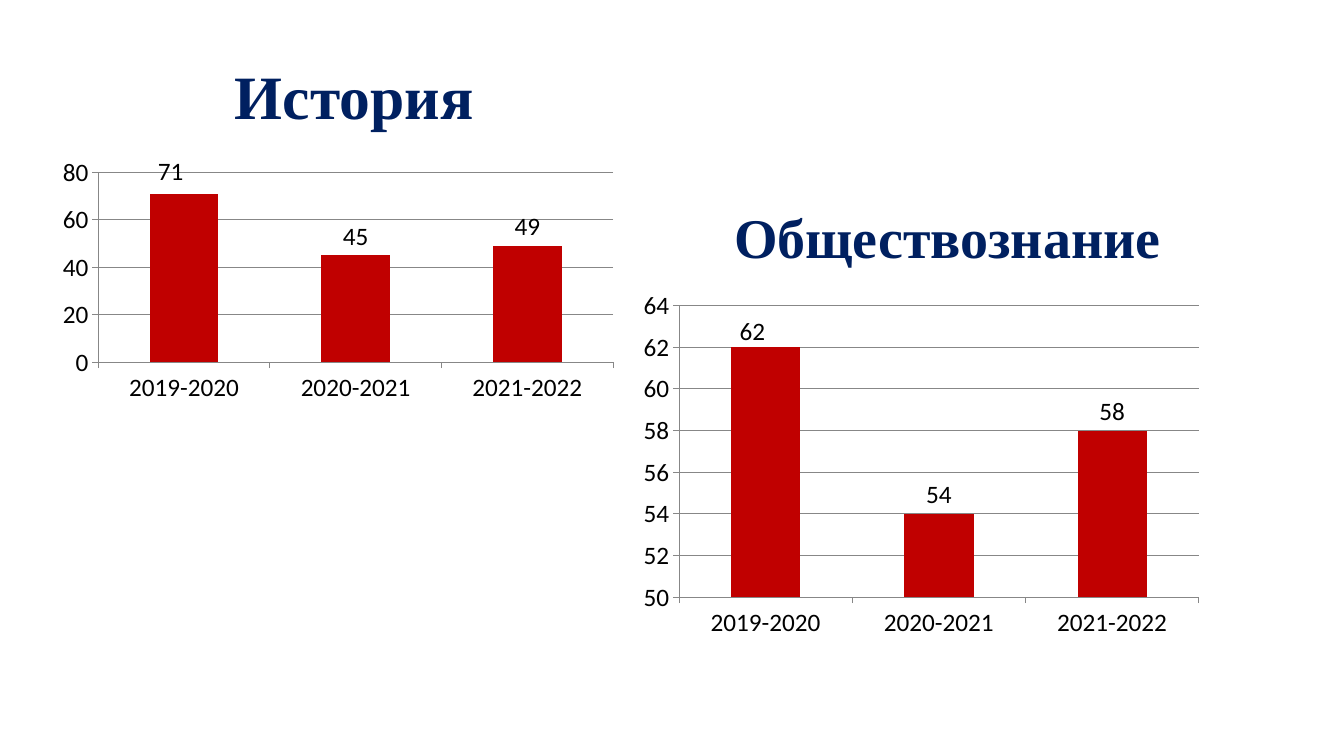
from lxml import etree
from pptx import Presentation
from pptx.chart.data import CategoryChartData
from pptx.dml.color import RGBColor
from pptx.enum.chart import XL_CHART_TYPE, XL_LABEL_POSITION as LABEL_POS, XL_TICK_MARK as TICK
from pptx.enum.text import MSO_ANCHOR as ANCHOR, PP_ALIGN
from pptx.oxml.ns import qn
from pptx.util import Pt

PX = 9144  # 100 px to the inch
NAVY = RGBColor(0x00, 0x20, 0x60)
RED = RGBColor(0xC0, 0x00, 0x00)
GREY = RGBColor(0x87, 0x87, 0x87)
BLACK = RGBColor(0, 0, 0)
YEARS = ["2019-2020", "2020-2021", "2021-2022"]


def emu(box):
    return [n * PX for n in box]


def add_heading(s, box, text, size, anchor, line_spacing):
    tf = s.shapes.add_textbox(*emu(box)).text_frame
    tf.word_wrap = True
    tf.vertical_anchor = anchor
    p = tf.paragraphs[0]
    p.text = text
    p.alignment = PP_ALIGN.CENTER
    p.line_spacing = line_spacing
    p.font.name = "Times New Roman"
    p.font.size = Pt(size)
    p.font.bold = True
    p.font.color.rgb = NAVY


def set_font(font):
    font.name = "Calibri"
    font.size = Pt(18)
    font.color.rgb = BLACK


def manual_layout(**settings):
    layout = etree.Element(qn("c:layout"))
    manual = etree.SubElement(layout, qn("c:manualLayout"))
    for tag, value in settings.items():
        etree.SubElement(manual, qn(f"c:{tag}")).set("val", str(value))
    return layout


def set_plot_area(chart, x, y, w, h):
    area = chart._chartSpace.find(f".//{qn('c:plotArea')}")
    for old in area.findall(qn("c:layout")):
        area.remove(old)
    area.insert(0, manual_layout(layoutTarget="inner", xMode="edge", yMode="edge",
                                 x=x, y=y, w=w, h=h))


def label_bars(chart, first_shift):
    """Show values above the bars and shift the first label by a share of the chart."""
    series = chart.plots[0].series[0]
    labels = series.data_labels
    labels.show_value = True
    first = series.points[0].data_label
    for label in (labels, first):
        label.position = LABEL_POS.OUTSIDE_END
        set_font(label.font)
    dx, dy = first_shift
    idx = chart._chartSpace.find(f".//{qn('c:dLbl')}/{qn('c:idx')}")
    idx.addnext(manual_layout(x=dx, y=dy))


def add_results_chart(s, box, values, scale, plot, first_shift):
    data = CategoryChartData()
    data.categories = YEARS
    data.add_series("Series 1", values)
    chart = s.shapes.add_chart(XL_CHART_TYPE.COLUMN_CLUSTERED, *emu(box), data).chart
    chart.has_legend = False
    chart.has_title = False
    set_font(chart.font)
    bars = chart.plots[0]
    bars.gap_width = 150
    bars.vary_by_categories = False
    fill = bars.series[0].format.fill
    fill.solid()
    fill.fore_color.rgb = RED

    value_axis = chart.value_axis
    value_axis.minimum_scale, value_axis.maximum_scale, value_axis.major_unit = scale
    value_axis.has_major_gridlines = True
    for axis in (chart.category_axis, value_axis):
        axis.major_tick_mark = TICK.OUTSIDE
        axis.format.line.color.rgb = GREY
    value_axis.major_gridlines.format.line.color.rgb = GREY

    set_plot_area(chart, *plot)
    label_bars(chart, first_shift)


def add_history(s, left, top):
    add_heading(s, (left + 73, top, 483, 125), "История", 44, ANCHOR.MIDDLE, 0.9)
    add_results_chart(s, (left, top + 119, 672, 339), (71, 45, 49), (0, 80, 20),
                      (0.09, 0.04, 0.76, 0.56), (-0.02, -0.01))


def add_social_studies(s, left, top):
    add_results_chart(s, (left, top + 141, 661, 354), (62, 54, 58), (50, 64, 2),
                      (0.09, 0.04, 0.78, 0.82), (-0.02, 0.01))
    add_heading(s, (left + 42, top, 567, 125), "Обществознание", 40, ANCHOR.BOTTOM, 1.0)


def main():
    prs = Presentation()
    prs.slide_width, prs.slide_height = emu((1333, 750))
    s = prs.slides.add_slide(prs.slide_layouts[6])
    add_history(s, 37, 36)
    add_social_studies(s, 614, 147)
    prs.save("out.pptx")


if __name__ == "__main__":
    main()
